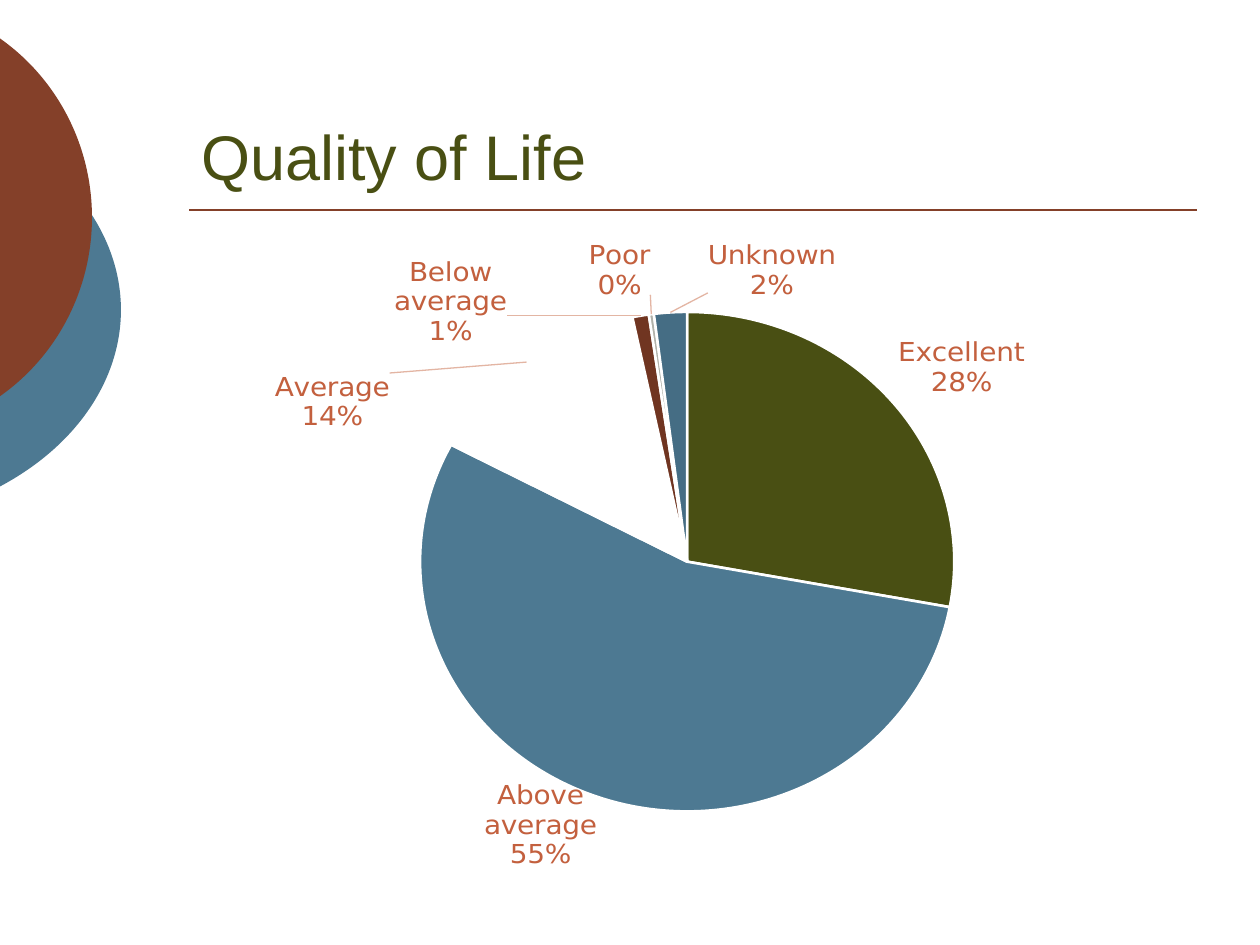
"""Build the Quality of Life slide: a title, two edge discs and a labelled pie chart."""
from copy import deepcopy
from dataclasses import dataclass

from pptx import Presentation
from pptx.chart.data import CategoryChartData
from pptx.dml.color import RGBColor
from pptx.enum.chart import XL_CHART_TYPE, XL_LABEL_POSITION
from pptx.enum.shapes import MSO_CONNECTOR, MSO_SHAPE
from pptx.enum.text import MSO_ANCHOR
from pptx.oxml import parse_xml
from pptx.oxml.ns import nsdecls, qn
from pptx.util import Pt

PIE = XL_CHART_TYPE.PIE
OUTSIDE_END = XL_LABEL_POSITION.OUTSIDE_END
STRAIGHT = MSO_CONNECTOR.STRAIGHT
OVAL = MSO_SHAPE.OVAL
BOTTOM = MSO_ANCHOR.BOTTOM


@dataclass(frozen=True)
class Theme:
    olive: str = "494F13"
    blue: str = "4D7992"
    rust: str = "844029"
    white: str = "FFFFFF"
    dark_rust: str = "703521"
    grey: str = "B1B2AA"
    dark_blue: str = "456D84"
    label: str = "C3603E"
    leader: str = "E3B5A3"
    title_font: str = "Arial"
    chart_font: str = "DejaVu Sans"
    title_size: int = 36
    chart_size: int = 10
    label_size: int = 16


theme = Theme()


def paint(fill, color):
    fill.solid()
    fill.fore_color.rgb = RGBColor.from_string(color)


def set_font(font, name, size, color):
    font.name = name
    font.size = Pt(size)
    font.color.rgb = RGBColor.from_string(color)


deck = Presentation()
deck.slide_width, deck.slide_height = Pt(720), Pt(540)
page = deck.slides.add_slide(deck.slide_layouts[6])

discs = [
    (-254.88, 54, 324, 246.24, theme.blue),
    (-190.8, 0, 243.36, 248.4, theme.rust),
]
for left, top, width, height, color in discs:
    disc = page.shapes.add_shape(OVAL, Pt(left), Pt(top), Pt(width), Pt(height))
    disc.shadow.inherit = False
    paint(disc.fill, color)
    disc.line.fill.background()

rule = page.shapes.add_connector(STRAIGHT, Pt(108), Pt(120), Pt(684), Pt(120))
rule.line.width = Pt(1)
paint(rule.line.fill, theme.rust)
rule._element.spPr.append(parse_xml(f"<a:effectLst {nsdecls('a')}/>"))

box = page.shapes.add_textbox(Pt(108), Pt(23.76), Pt(576), Pt(90))
box.text_frame.word_wrap = True
box.text_frame.vertical_anchor = BOTTOM
para = box.text_frame.paragraphs[0]
para.text = "Quality of Life"
set_font(para.font, theme.title_font, theme.title_size, theme.olive)

slices = [
    ("Excellent", 28, theme.olive),
    ("Above average", 55, theme.blue),
    ("Average", 14, theme.white),
    ("Below average", 1, theme.dark_rust),
    ("Poor", 0.3, theme.grey),
    ("Unknown", 2, theme.dark_blue),
]
data = CategoryChartData()
data.categories = [name for name, value, color in slices]
data.add_series("Series 1", [value for name, value, color in slices])
chart_width, chart_height = 582, 384
chart = page.shapes.add_chart(
    PIE, Pt(95.76), Pt(126), Pt(chart_width), Pt(chart_height), data
).chart
chart.has_title = False
chart.has_legend = False
set_font(chart.font, theme.chart_font, theme.chart_size, theme.rust)

plot = chart.plots[0]
plot.vary_by_categories = True
series = plot.series[0]
for index, (name, value, color) in enumerate(slices):
    wedge = series.points[index].format
    paint(wedge.fill, color)
    paint(wedge.line.fill, theme.white)
    wedge.line.width = Pt(1.5)

labels = series.data_labels
labels.show_category_name = True
labels.show_percentage = True
labels.show_value = False
labels.number_format = "0%"
labels.number_format_is_linked = False
labels.position = OUTSIDE_END
set_font(labels.font, theme.chart_font, theme.label_size, theme.label)

label_list = labels._element
for tag in ("c:separator", "c:showLeaderLines", "c:leaderLines"):
    for node in label_list.findall(qn(tag)):
        label_list.remove(node)
label_list.append(parse_xml(f"<c:separator {nsdecls('c')}>\n</c:separator>"))
shared_settings = list(label_list)
label_list.append(parse_xml(f'<c:showLeaderLines {nsdecls("c")} val="1"/>'))
label_list.append(parse_xml(
    f'<c:leaderLines {nsdecls("c", "a")}><c:spPr><a:ln w="9525"><a:solidFill>'
    f'<a:srgbClr val="{theme.leader}"/></a:solidFill></a:ln></c:spPr></c:leaderLines>'
))

label_shifts = {2: (-0.13, 0.12), 3: (-0.13, 0.06), 4: (0, -0.02), 5: (0.1, -0.02)}
for place, (index, (shift_x, shift_y)) in enumerate(label_shifts.items()):
    point_label = parse_xml(
        f'<c:dLbl {nsdecls("c")}><c:idx val="{index}"/><c:layout><c:manualLayout>'
        f'<c:x val="{shift_x}"/><c:y val="{shift_y}"/>'
        "</c:manualLayout></c:layout></c:dLbl>"
    )
    for setting in shared_settings:
        point_label.append(deepcopy(setting))
    label_list.insert(place, point_label)

plot_left, plot_top, plot_side = 144.3, 43, 305.3
plot_area = chart._chartSpace.chart.plotArea
for layout in plot_area.findall(qn("c:layout")):
    plot_area.remove(layout)
plot_area.insert(0, parse_xml(
    f'<c:layout {nsdecls("c")}><c:manualLayout><c:layoutTarget val="inner"/>'
    '<c:xMode val="edge"/><c:yMode val="edge"/>'
    f'<c:x val="{plot_left / chart_width}"/><c:y val="{plot_top / chart_height}"/>'
    f'<c:w val="{plot_side / chart_width}"/><c:h val="{plot_side / chart_height}"/>'
    "</c:manualLayout></c:layout>"
))

deck.save("out.pptx")
